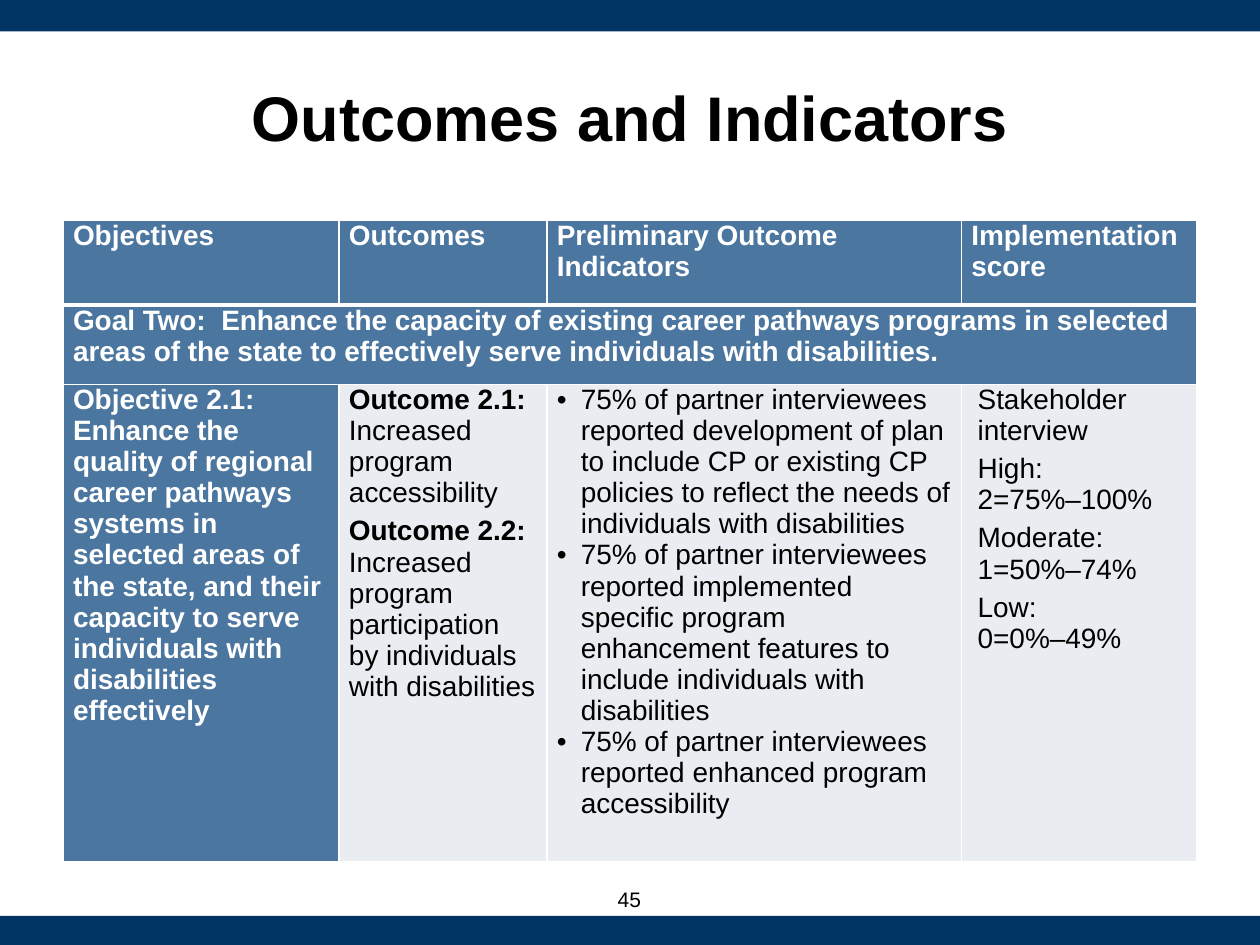
from dataclasses import dataclass

from lxml import etree
from pptx import Presentation
from pptx.dml.color import RGBColor
from pptx.enum.shapes import MSO_SHAPE
from pptx.enum.text import MSO_ANCHOR, PP_ALIGN
from pptx.oxml.ns import qn
from pptx.util import Inches, Pt

RECT = MSO_SHAPE.RECTANGLE
MIDDLE = MSO_ANCHOR.MIDDLE
TOP = MSO_ANCHOR.TOP
LEFT = PP_ALIGN.LEFT
CENTER = PP_ALIGN.CENTER

NAVY, BLUE, PALE = "003462", "4B76A0", "E9ECF0"
WHITE, BLACK = "FFFFFF", "000000"
COLS = (2.19, 1.65, 3.29, 1.87)
ROWS = (0.67, 0.63, 3.79)


@dataclass
class Bar:
    top: float
    height: float


@dataclass
class Para:
    text: str
    lead: str = ""


@dataclass
class Entry:
    row: int
    col: int
    paras: list[Para]
    fill: str = BLUE
    color: str = WHITE
    bold: bool = True
    gap: float = 0
    indent: float = 0
    bullet: bool = False


BARS = [Bar(0, 0.25), Bar(7.27, 0.23)]
HEADS = ("Objectives", "Outcomes", "Preliminary Outcome Indicators",
         "Implementation score")
GOAL = ("Goal Two:  Enhance the capacity of existing career pathways programs "
        "in selected areas of the state to effectively serve individuals with "
        "disabilities.")
AIM = ("Objective 2.1:  Enhance the quality of regional career pathways systems "
       "in selected areas of the state, and their capacity to serve individuals "
       "with disabilities effectively")
RESULTS = [
    Para("Increased program accessibility", "Outcome 2.1: "),
    Para("Increased program participation by individuals with disabilities",
         "Outcome 2.2: "),
]
SIGNS = [Para("75% of partner interviewees reported " + end) for end in (
    "development of plan to include CP or existing CP policies to reflect "
    "the needs of individuals with disabilities",
    "implemented specific program enhancement features to include "
    "individuals with disabilities",
    "enhanced program accessibility",
)]
SCORES = [Para(text) for text in (
    "Stakeholder interview", "High:\n2=75%–100%",
    "Moderate:\n1=50%–74%", "Low:\n0=0%–49%",
)]
ENTRIES = [Entry(0, col, [Para(head)]) for col, head in enumerate(HEADS)] + [
    Entry(1, 0, [Para(GOAL)]),
    Entry(2, 0, [Para(AIM)]),
    Entry(2, 1, RESULTS, PALE, BLACK, False, gap=2),
    Entry(2, 2, SIGNS, PALE, BLACK, False, indent=0.19, bullet=True),
    Entry(2, 3, SCORES, PALE, BLACK, False, gap=2, indent=0.05),
]


def paint(target, color: str) -> None:
    target.solid()
    target.fore_color.rgb = RGBColor.from_string(color)


def write(frame, paras: list[Para], *, size: float = 16, color: str = BLACK,
          bold: bool = False, align=LEFT, gap: float = 0,
          indent: float = 0, bullet: bool = False) -> None:
    frame.word_wrap = True
    for i, item in enumerate(paras):
        para = frame.paragraphs[0] if i == 0 else frame.add_paragraph()
        para.alignment = align
        para.space_before = para.space_after = Pt(gap)
        props = para._p.get_or_add_pPr()
        props.set("marL", str(Inches(indent)))
        props.set("indent", str(-Inches(indent) if bullet else 0))
        if bullet:
            etree.SubElement(props, qn("a:buFont")).set("typeface", "Arial")
            etree.SubElement(props, qn("a:buChar")).set("char", "•")
        parts = [(item.lead, True)] if item.lead else []
        parts += [(line, bold) for line in item.text.split("\n")]
        for j, (text, heavy) in enumerate(parts):
            if j and not item.lead:
                para.add_line_break()
            run = para.add_run()
            run.text = text
            run.font.name = "Arial"
            run.font.size = Pt(size)
            run.font.bold = heavy
            paint(run.font.fill, color)


def edge(cell, side: str, width: float) -> None:
    line = etree.SubElement(cell._tc.get_or_add_tcPr(), qn("a:" + side))
    line.set("w", str(Pt(width)))
    fill = etree.SubElement(line, qn("a:solidFill"))
    etree.SubElement(fill, qn("a:srgbClr")).set("val", WHITE)


def draw_bar(slide, bar: Bar) -> None:
    shape = slide.shapes.add_shape(
        RECT, 0, Inches(bar.top), Inches(10), Inches(bar.height))
    shape.shadow.inherit = False
    paint(shape.fill, NAVY)
    shape.line.fill.background()


def draw_title(slide) -> None:
    title = slide.shapes.title
    title.left, title.top = Inches(0.5), Inches(0.3)
    title.width, title.height = Inches(9), Inches(1.25)
    title.text_frame.vertical_anchor = MIDDLE
    write(title.text_frame, [Para("Outcomes and Indicators")],
          size=36, bold=True, align=CENTER)


def draw_table(slide) -> None:
    table = slide.shapes.add_table(
        len(ROWS), len(COLS), Inches(0.5), Inches(1.75),
        Inches(sum(COLS)), Inches(sum(ROWS))).table
    for col, width in zip(table.columns, COLS):
        col.width = Inches(width)
    for row, height in zip(table.rows, ROWS):
        row.height = Inches(height)
    for r in range(len(ROWS)):
        for c in range(len(COLS)):
            cell = table.cell(r, c)
            edge(cell, "lnL", 1)
            edge(cell, "lnR", 1)
            edge(cell, "lnT", 3 if r == 1 else 1)
            edge(cell, "lnB", 3 if r == 0 else 1)
            paint(cell.fill, BLUE)
    table.cell(1, 0).merge(table.cell(1, 3))
    for entry in ENTRIES:
        cell = table.cell(entry.row, entry.col)
        cell.margin_left = cell.margin_right = Inches(0.08)
        cell.margin_top = cell.margin_bottom = 0
        cell.vertical_anchor = TOP
        paint(cell.fill, entry.fill)
        write(cell.text_frame, entry.paras, color=entry.color,
              bold=entry.bold, gap=entry.gap, indent=entry.indent,
              bullet=entry.bullet)


def draw_page(slide) -> None:
    box = slide.shapes.add_textbox(
        Inches(3.83), Inches(7), Inches(2.33), Inches(0.27))
    box.text_frame.vertical_anchor = MIDDLE
    write(box.text_frame, [Para("45")], size=12, align=CENTER)


def main() -> None:
    deck = Presentation()
    deck.slide_width, deck.slide_height = Inches(10), Inches(7.5)
    slide = deck.slides.add_slide(deck.slide_layouts[5])
    paint(slide.background.fill, WHITE)
    for bar in BARS:
        draw_bar(slide, bar)
    draw_title(slide)
    draw_table(slide)
    draw_page(slide)
    deck.save("out.pptx")


if __name__ == "__main__":
    main()
